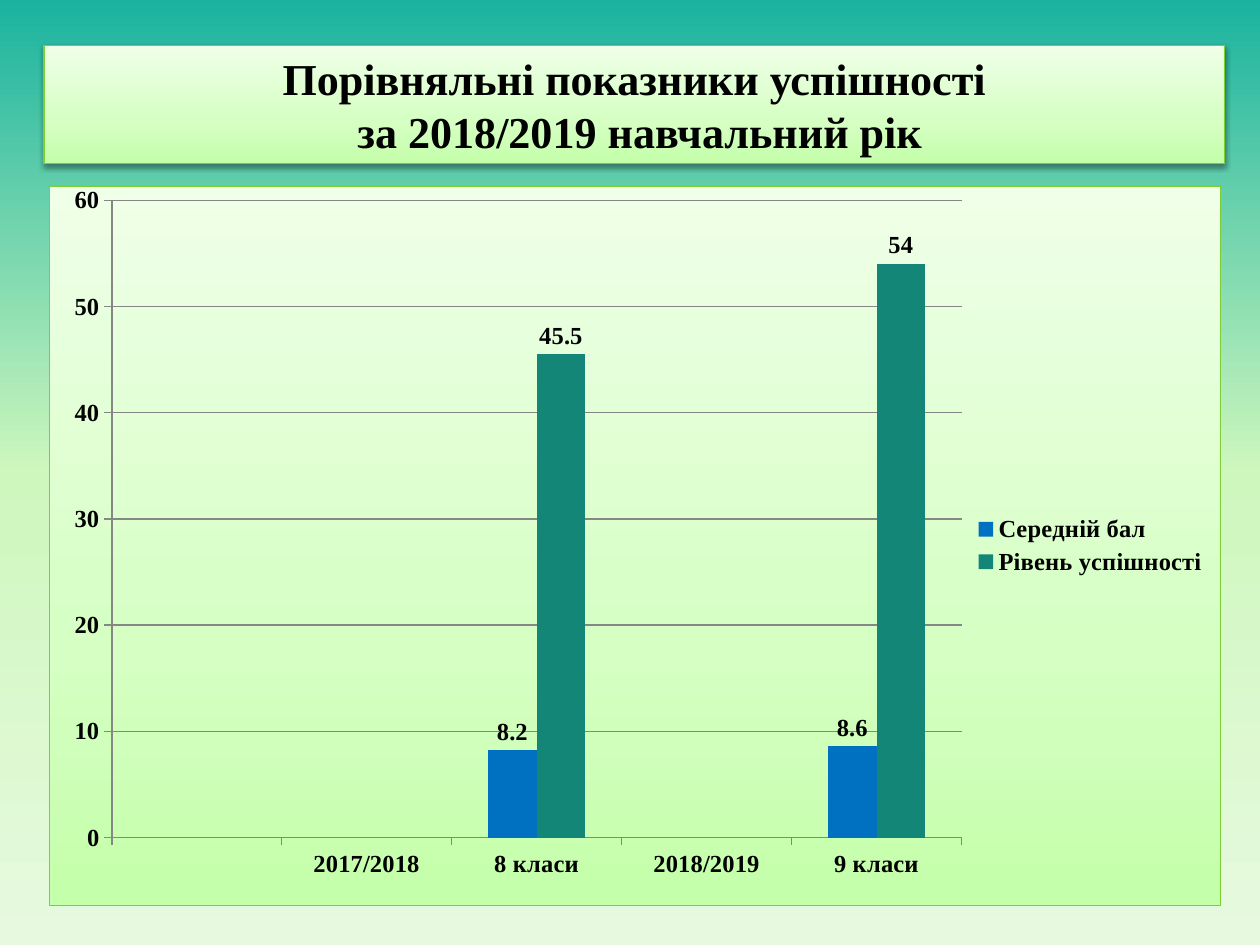
from lxml import etree
from pptx import Presentation
from pptx.chart.data import CategoryChartData
from pptx.dml.color import RGBColor
from pptx.enum.chart import XL_CHART_TYPE, XL_LABEL_POSITION, XL_LEGEND_POSITION, XL_TICK_MARK
from pptx.enum.shapes import MSO_SHAPE
from pptx.enum.text import MSO_ANCHOR, PP_ALIGN
from pptx.oxml import parse_xml
from pptx.util import Inches, Pt

COLUMN = XL_CHART_TYPE.COLUMN_CLUSTERED
ABOVE = XL_LABEL_POSITION.OUTSIDE_END
RIGHT = XL_LEGEND_POSITION.RIGHT
OUTSIDE = XL_TICK_MARK.OUTSIDE
NONE = XL_TICK_MARK.NONE
RECT = MSO_SHAPE.RECTANGLE
MIDDLE = MSO_ANCHOR.MIDDLE
CENTER = PP_ALIGN.CENTER

A = "http://schemas.openxmlformats.org/drawingml/2006/main"
C = "http://schemas.openxmlformats.org/drawingml/2006/chart"
PALE = [(0, "C4FFAA"), (35, "D5FFC3"), (100, "EFFFE8")]
TEAL = [(0, "1AB39F"), (50, "CEF7BD"), (100, "E7FADF")]
EDGE = "7CD036"
GRAY = "868686"


def rgb(code):
    return RGBColor.from_string(code)


def blend(stops, angle):
    """Return the XML of a linear gradient fill."""
    marks = "".join(
        f'<a:gs pos="{place * 1000}"><a:srgbClr val="{code}"/></a:gs>' for place, code in stops
    )
    return (f'<a:gradFill xmlns:a="{A}" rotWithShape="1"><a:gsLst>{marks}</a:gsLst>'
            f'<a:lin ang="{angle * 60000}" scaled="0"/></a:gradFill>')


deck = Presentation()
deck.slide_width, deck.slide_height = Inches(10), Inches(7.5)
slide = deck.slides.add_slide(deck.slide_layouts[6])

# Background
slide.background.fill.solid()
back = slide.element.find(f".//{{{A}}}solidFill")
back.getparent().replace(back, parse_xml(blend(TEAL, 90)))

# Title
title = slide.shapes.add_shape(RECT, Inches(0.35), Inches(0.36), Inches(9.37), Inches(0.94))
title.fill.solid()
props = title.element.spPr
props.replace(props.find(f"{{{A}}}solidFill"), parse_xml(blend(PALE, 270)))
title.line.color.rgb = rgb(EDGE)
title.line.width = Pt(0.75)
title.shadow.inherit = False
props.find(f"{{{A}}}effectLst").append(parse_xml(
    f'<a:outerShdw xmlns:a="{A}" blurRad="40000" dist="20000" dir="5400000" rotWithShape="0">'
    '<a:srgbClr val="000000"><a:alpha val="38000"/></a:srgbClr></a:outerShdw>'))
frame = title.text_frame
frame.word_wrap = True
frame.vertical_anchor = MIDDLE
frame.text = "Порівняльні показники успішності\v за 2018/2019 навчальний рік"
head = frame.paragraphs[0]
head.alignment = CENTER
head.font.size = Pt(25.2)

# Chart
data = CategoryChartData()
data.categories = ["", "2017/2018", "8 класи", "2018/2019", "9 класи"]
data.add_series("Середній бал", [None, None, 8.2, None, 8.6])
data.add_series("Рівень успішності", [None, None, 45.5, None, 54])
chart = slide.shapes.add_chart(
    COLUMN, Inches(0.39), Inches(1.47), Inches(9.3), Inches(5.72), data).chart
chart.has_title = False
chart.font.size = Pt(10)
chart.font.name = "Calibri"
chart.font.color.rgb = rgb("000000")
chart.has_legend = True
chart.legend.position = RIGHT
chart.legend.include_in_layout = False

plot = chart.plots[0]
plot.gap_width = 150
plot.overlap = 0
plot.vary_by_categories = False
fonts = [head.font, chart.legend.font]
for series, code in zip(plot.series, ["0070C0", "138677"]):
    series.format.fill.solid()
    series.format.fill.fore_color.rgb = rgb(code)
    series.invert_if_negative = False
    labels = series.data_labels
    labels.show_value = True
    labels.position = ABOVE
    fonts.append(labels.font)

scale = chart.value_axis
scale.minimum_scale, scale.maximum_scale, scale.major_unit = 0, 60, 10
scale.has_major_gridlines = True
lines = [scale.major_gridlines.format.line]
for axis in (chart.category_axis, scale):
    axis.major_tick_mark = OUTSIDE
    axis.minor_tick_mark = NONE
    lines.append(axis.format.line)
    fonts.append(axis.tick_labels.font)
for line in lines:
    line.color.rgb = rgb(GRAY)
    line.width = Pt(0.75)
for font in fonts:
    font.name = "Times New Roman"
    font.bold = True
    font.color.rgb = rgb("000000")
for font in fonts[1:]:
    font.size = Pt(14)

# Plot position inside the chart, as shares of its size
area = chart.element.find(f".//{{{C}}}plotArea")
for old in area.findall(f"{{{C}}}layout"):
    area.remove(old)
layout = etree.Element(f"{{{C}}}layout")
manual = etree.SubElement(layout, f"{{{C}}}manualLayout")
for tag, value in [("layoutTarget", "inner"), ("xMode", "edge"), ("yMode", "edge"),
                   ("x", "0.053"), ("y", "0.02"), ("w", "0.726"), ("h", "0.886")]:
    etree.SubElement(manual, f"{{{C}}}{tag}").set("val", value)
area.insert(0, layout)

# Chart fill and border
chart.element.find(f"{{{C}}}chart").addnext(parse_xml(
    f'<c:spPr xmlns:c="{C}" xmlns:a="{A}">{blend(PALE, 270)}'
    f'<a:ln w="9525"><a:solidFill><a:srgbClr val="{EDGE}"/></a:solidFill></a:ln></c:spPr>'))

deck.save("out.pptx")
